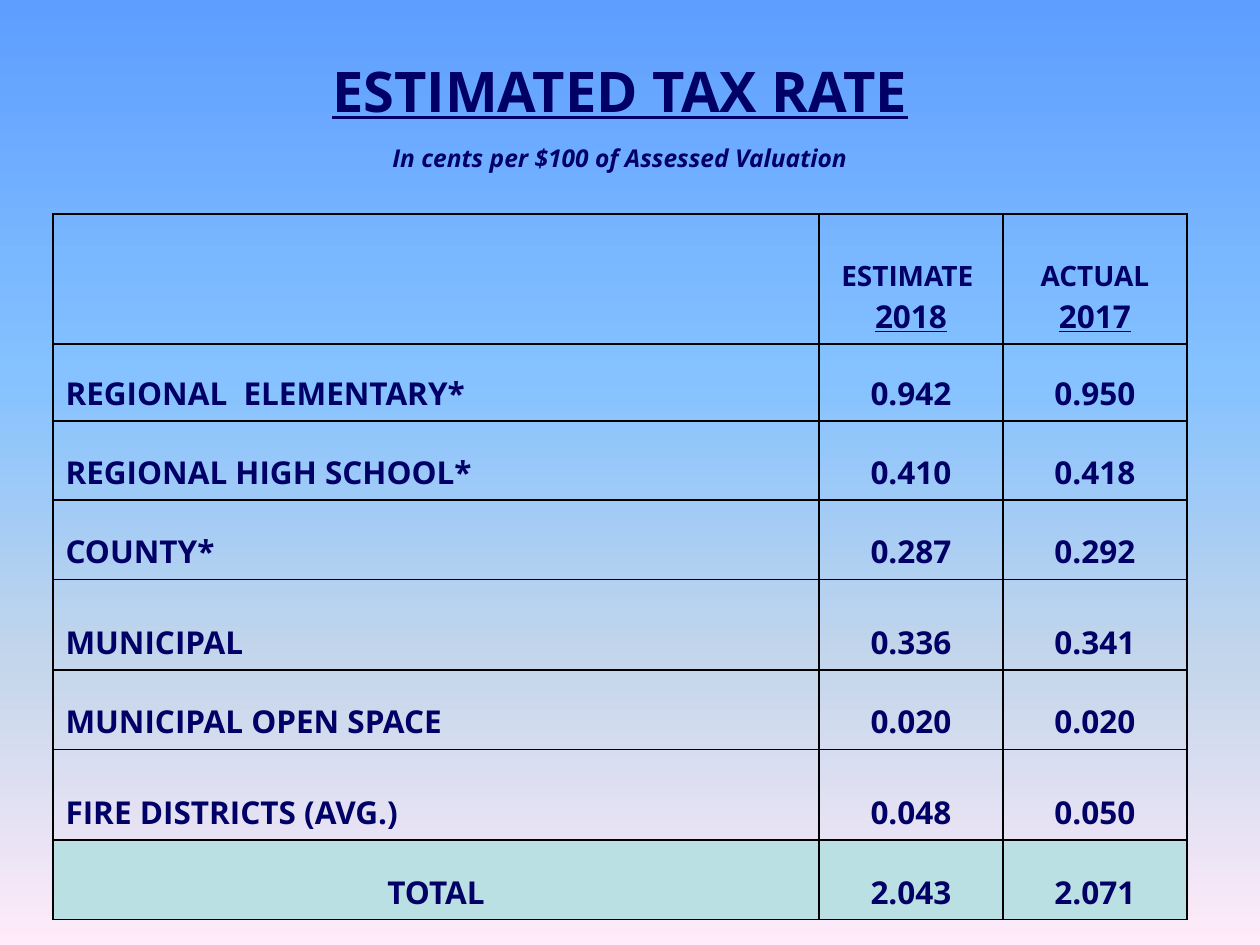
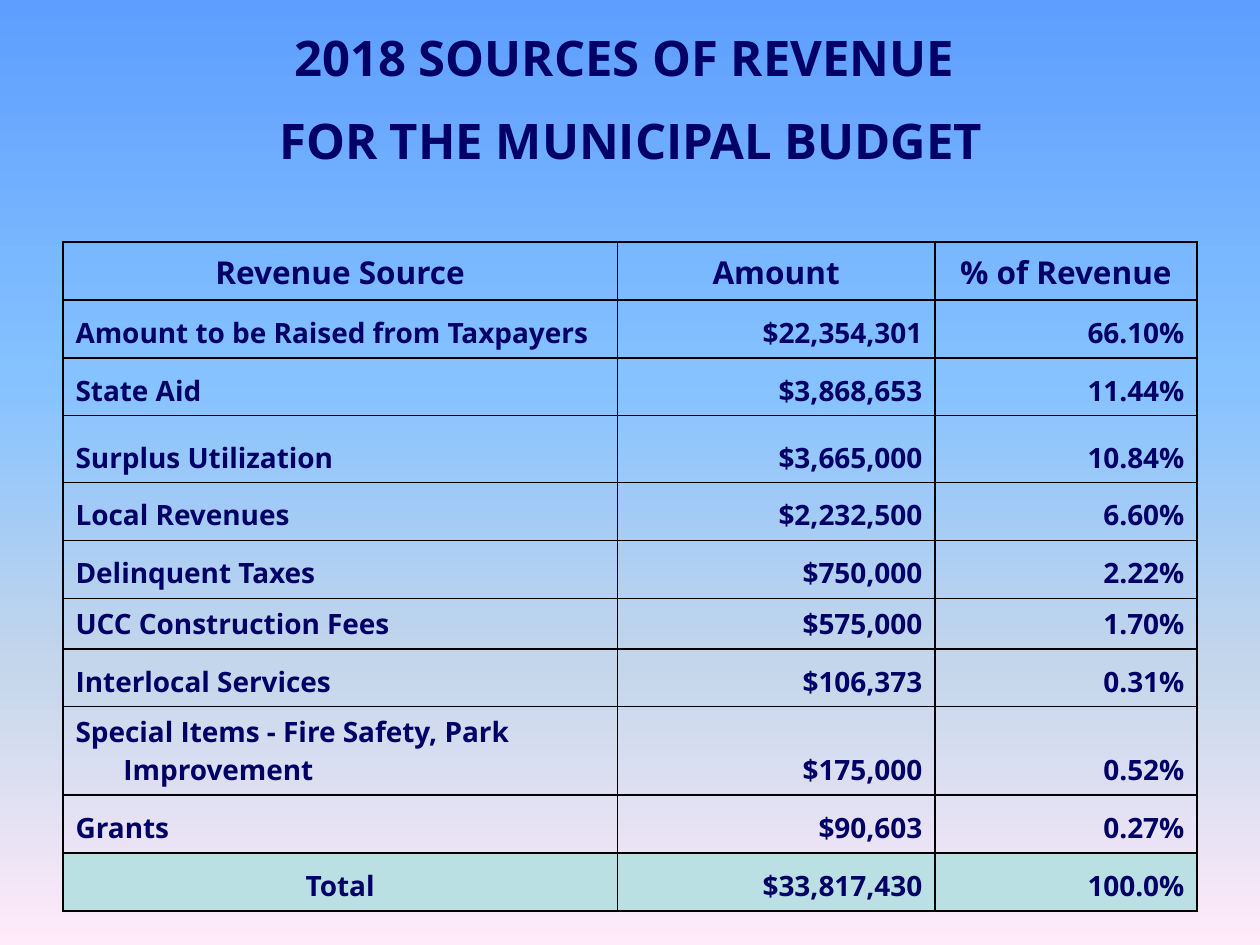
from dataclasses import dataclass

from pptx import Presentation
from pptx import util as u
from pptx.dml.color import RGBColor
from pptx.enum import text
from pptx.oxml import parse_xml
from pptx.oxml.ns import nsdecls, qn


@dataclass(frozen=True)
class Theme:
    font: str = "Open Sans"
    ink: str = "000066"
    rule: str = "000000"
    total_band: str = "BBE0E3"
    sky: tuple = ((0, "5E9EFF"), (40, "85C2FF"), (70, "C4D6EB"), (100, "FFEBFA"))
    rate_title: int = 32
    revenue_title: int = 28
    large: int = 18
    body: int = 16
    note: int = 14
    hanging: float = 0.38


THEME = Theme()
LEFT, CENTER, RIGHT = text.PP_ALIGN.LEFT, text.PP_ALIGN.CENTER, text.PP_ALIGN.RIGHT

TAX_RATES = [
    ("REGIONAL  ELEMENTARY*", "0.942", "0.950"),
    ("REGIONAL HIGH SCHOOL*", "0.410", "0.418"),
    ("COUNTY*", "0.287", "0.292"),
    ("MUNICIPAL", "0.336", "0.341"),
    ("MUNICIPAL OPEN SPACE", "0.020", "0.020"),
    ("FIRE DISTRICTS (AVG.)", "0.048", "0.050"),
    ("TOTAL", "2.043", "2.071"),
]
REVENUES = [
    ("Amount to be Raised from Taxpayers", "$22,354,301", "66.10%"),
    ("State Aid", "$3,868,653", "11.44%"),
    ("Surplus Utilization", "$3,665,000", "10.84%"),
    ("Local Revenues", "$2,232,500", "6.60%"),
    ("Delinquent Taxes", "$750,000", "2.22%"),
    ("UCC Construction Fees", "$575,000", "1.70%"),
    ("Interlocal Services", "$106,373", "0.31%"),
    ("Special Items - Fire Safety, Park Improvement", "$175,000", "0.52%"),
    ("Grants", "$90,603", "0.27%"),
    ("Total", "$33,817,430", "100.0%"),
]


def paint_sky(master):
    """Give every slide the same vertical gradient."""
    fill = master.background.fill
    fill.gradient()
    fill.gradient_angle = 270
    stops = next(master.element.iter(qn("a:gsLst")))
    for stop in list(stops):
        stops.remove(stop)
    for percent, color in THEME.sky:
        stops.append(parse_xml(
            f'<a:gs {nsdecls("a")} pos="{percent * 1000}"><a:srgbClr val="{color}"/></a:gs>'))


def style_line(paragraph, size, align, underline=False, italic=False):
    paragraph.alignment = align
    for run in paragraph.runs:
        font = run.font
        font.name, font.size, font.bold = THEME.font, u.Pt(size), True
        font.underline, font.italic = underline, italic
        font.color.rgb = RGBColor.from_string(THEME.ink)


def rule_cell(cell, sides):
    """Draw the named sides (L, R, T, B) and clear the others."""
    properties = cell._tc.get_or_add_tcPr()
    for position, side in enumerate("LRTB"):
        paint = (f'<a:solidFill><a:srgbClr val="{THEME.rule}"/></a:solidFill>'
                 if side in sides else "<a:noFill/>")
        properties.insert(position, parse_xml(
            f'<a:ln{side} {nsdecls("a")} w="{u.Pt(1)}">{paint}</a:ln{side}>'))


def fill_cell(cell, lines, sizes, align, underlined=(), italic=False):
    cell.vertical_anchor = text.MSO_ANCHOR.BOTTOM
    cell.text_frame.text = lines
    indent = u.Inches(THEME.hanging)
    for number, paragraph in enumerate(cell.text_frame.paragraphs):
        style_line(paragraph, sizes[number], align, number in underlined, italic)
        properties = paragraph._p.get_or_add_pPr()
        properties.set("marL", str(indent))
        properties.set("indent", str(-indent))


def add_ruled_table(slide, left, top, widths, heights):
    """Add a plain table whose cells are clear and ruled on all sides."""
    table = slide.shapes.add_table(
        len(heights), len(widths), u.Inches(left), u.Inches(top),
        u.Inches(sum(widths)), u.Inches(sum(heights))).table
    table.first_row = table.horz_banding = False
    for column, width in zip(table.columns, widths):
        column.width = u.Inches(width)
    for row, height in zip(table.rows, heights):
        row.height = u.Inches(height)
    return table


def rule_rows(table, first_row, band_row):
    for number, row in enumerate(table.rows):
        if number < first_row:
            continue
        for cell in row.cells:
            if number == band_row:
                cell.fill.solid()
                cell.fill.fore_color.rgb = RGBColor.from_string(THEME.total_band)
            else:
                cell.fill.background()
            rule_cell(cell, "LRTB")


def fill_figures(table, first_row, figures, size, figure_align):
    """Write label and figures; the last row is the total."""
    for number, values in enumerate(figures):
        is_total = number == len(figures) - 1
        label_align = CENTER if is_total else LEFT
        for column, value in enumerate(values):
            fill_cell(table.cell(first_row + number, column), value, [size],
                      figure_align if column else label_align)


def tax_rate_slide(slide):
    heights = [1.07, 0.63, 1.03, 0.61, 0.63, 0.63, 0.72, 0.63, 0.72, 0.63]
    table = add_ruled_table(slide, 0.42, 0, [6.08, 1.46, 1.46], heights)

    # Title and unit lines span the table without a frame
    for row, sides in enumerate(("", "B")):
        table.cell(row, 0).merge(table.cell(row, 2))
        for cell in table.rows[row].cells:
            cell.fill.background()
            rule_cell(cell, sides)
    fill_cell(table.cell(0, 0), "ESTIMATED TAX RATE", [THEME.rate_title], CENTER, {0})
    unit = table.cell(1, 0)
    fill_cell(unit, "In cents per $100 of Assessed Valuation", [THEME.note], CENTER, italic=True)
    unit.margin_bottom = u.Inches(0.31)

    # Column heads
    for column, head in enumerate(("ESTIMATE \n2018", "ACTUAL\n2017"), start=1):
        fill_cell(table.cell(2, column), head, [THEME.body, THEME.large], CENTER, {1})

    # Rates
    fill_figures(table, 3, TAX_RATES, THEME.large, CENTER)
    rule_rows(table, 2, len(heights) - 1)


def revenue_slide(slide):
    # Title
    title = slide.shapes.add_textbox(
        u.Inches(0.42), u.Inches(0.17), u.Inches(9.17), u.Inches(1.27)).text_frame
    title.word_wrap = True
    title.auto_size = text.MSO_AUTO_SIZE.SHAPE_TO_FIT_TEXT
    title.text = "2018 SOURCES OF REVENUE \nFOR THE MUNICIPAL BUDGET"
    for paragraph in title.paragraphs:
        style_line(paragraph, THEME.revenue_title, CENTER)
        paragraph._p.get_or_add_pPr().insert(0, parse_xml(
            f'<a:spcBef {nsdecls("a")}><a:spcPct val="50000"/></a:spcBef>'))

    # Revenue table
    heights = [0.46, 0.46, 0.46, 0.53, 0.46, 0.46, 0.4, 0.46, 0.7, 0.46, 0.46]
    table = add_ruled_table(slide, 0.5, 1.92, [4.4, 2.52, 2.08], heights)
    for column, head in enumerate(("Revenue Source", "Amount", "% of Revenue")):
        fill_cell(table.cell(0, column), head, [THEME.large], CENTER)
    fill_figures(table, 1, REVENUES, THEME.body, RIGHT)
    rule_rows(table, 0, len(heights) - 1)


def main():
    deck = Presentation()
    deck.slide_width, deck.slide_height = u.Inches(10), u.Inches(7.5)
    paint_sky(deck.slide_master)
    for build in (tax_rate_slide, revenue_slide):
        build(deck.slides.add_slide(deck.slide_layouts[6]))
    deck.save("out.pptx")


if __name__ == "__main__":
    main()
